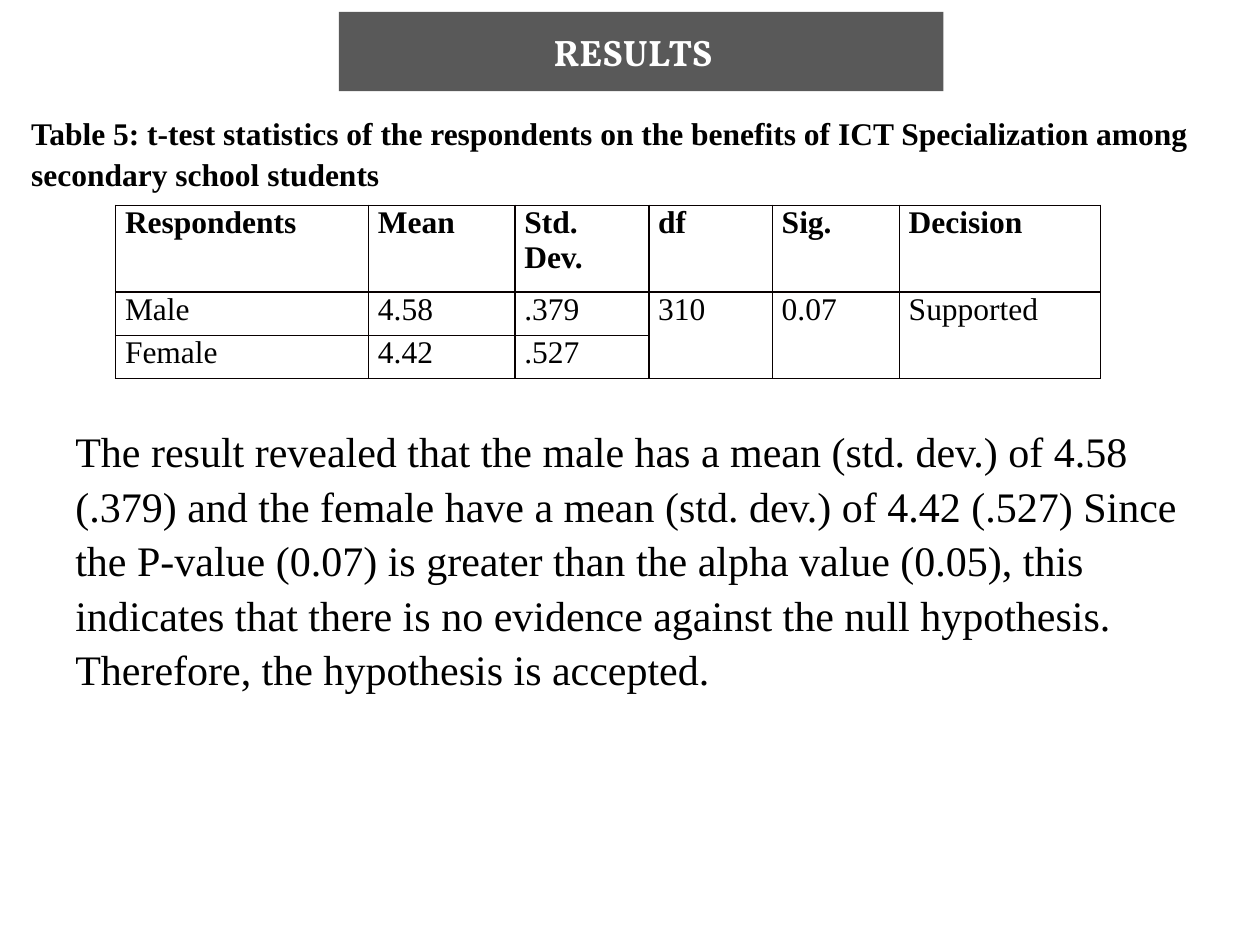
from lxml.etree import SubElement
from pptx import Presentation
from pptx.dml.color import RGBColor
from pptx.enum.text import MSO_ANCHOR, PP_ALIGN
from pptx.oxml.ns import qn
from pptx.util import Cm, Pt

BLACK = RGBColor(0x00, 0x00, 0x00)
WHITE = RGBColor(0xFF, 0xFF, 0xFF)
GREY = RGBColor(0x59, 0x59, 0x59)
RULE = RGBColor(0x08, 0x00, 0x00)
SERIF = "Times New Roman"

TITLE = "RESULTS"
CAPTION = ("Table 5: t-test statistics of the respondents on the benefits of "
           "ICT Specialization among secondary school students")
ROWS = [
    ["Respondents", "Mean", "Std. Dev.", "df", "Sig.", "Decision"],
    ["Male", "4.58", ".379", "310", "0.07", "Supported"],
    ["Female", "4.42", ".527", "", "", ""],
]
WIDTHS = [5.1, 2.95, 2.7, 2.49, 2.56, 4.06]
HEIGHTS = [1.75, 0.87, 0.87]
SHARED = [3, 4, 5]  # columns whose value holds for both groups
FINDING = ("The result revealed that the male has a mean (std. dev.) of 4.58 "
           "(.379) and the female have a mean (std. dev.) of 4.42 (.527) Since "
           "the P-value (0.07) is greater than the alpha value (0.05), this "
           "indicates that there is no evidence against the null hypothesis. "
           "Therefore, the hypothesis is accepted.")


def style(para, size, bold=False, color=BLACK, face=SERIF):
    for run in para.runs:
        font = run.font
        font.name, font.size, font.bold = face, Pt(size), bold
        font.color.rgb = color


def add_text(slide, text, box, size, bold=False):
    frame = slide.shapes.add_textbox(*map(Cm, box)).text_frame
    frame.word_wrap = True
    frame.text = text
    para = frame.paragraphs[0]
    para.line_spacing = 1.08
    style(para, size, bold)


def add_rules(cell):
    """Draw a thin line on all four sides of a cell."""
    props = cell._tc.get_or_add_tcPr()
    for side in ("a:lnL", "a:lnR", "a:lnT", "a:lnB"):
        line = SubElement(props, qn(side), w=str(Pt(1)))
        fill = SubElement(line, qn("a:solidFill"))
        SubElement(fill, qn("a:srgbClr"), val=str(RULE))


def add_title(slide):
    title = slide.shapes.title
    title.left, title.top = Cm(6.83), Cm(0.24)
    title.width, title.height = Cm(12.19), Cm(1.6)
    title.fill.solid()
    title.fill.fore_color.rgb = GREY
    frame = title.text_frame
    frame.text = TITLE
    frame.vertical_anchor = MSO_ANCHOR.MIDDLE
    frame.margin_left, frame.margin_right = Cm(0.25), Cm(0.58)
    para = frame.paragraphs[0]
    para.alignment = PP_ALIGN.CENTER
    style(para, 21, True, WHITE, "Vollkorn")


def add_stats(slide):
    table = slide.shapes.add_table(
        len(ROWS), len(WIDTHS), Cm(2.33), Cm(4.14),
        Cm(sum(WIDTHS)), Cm(sum(HEIGHTS))).table
    table.first_row = table.horz_banding = False
    for col, width in zip(table.columns, WIDTHS):
        col.width = Cm(width)
    for r, (row, height) in enumerate(zip(ROWS, HEIGHTS)):
        table.rows[r].height = Cm(height)
        for c, text in enumerate(row):
            cell = table.cell(r, c)
            cell.margin_left = cell.margin_right = Cm(0.19)
            cell.margin_top = cell.margin_bottom = 0
            add_rules(cell)
            cell.fill.background()
            cell.text = text
            style(cell.text_frame.paragraphs[0], 18, r == 0)
    for c in SHARED:
        table.cell(1, c).merge(table.cell(2, c))


def main():
    deck = Presentation()
    deck.slide_width, deck.slide_height = Cm(25.4), Cm(19.05)
    slide = deck.slides.add_slide(deck.slide_layouts[5])
    add_title(slide)
    add_text(slide, CAPTION, (0.38, 2.11, 24.49, 1.8), 18, True)
    add_stats(slide)
    add_text(slide, FINDING, (1.27, 8.38, 23.04, 6.5), 24)
    deck.save("out.pptx")


if __name__ == "__main__":
    main()
